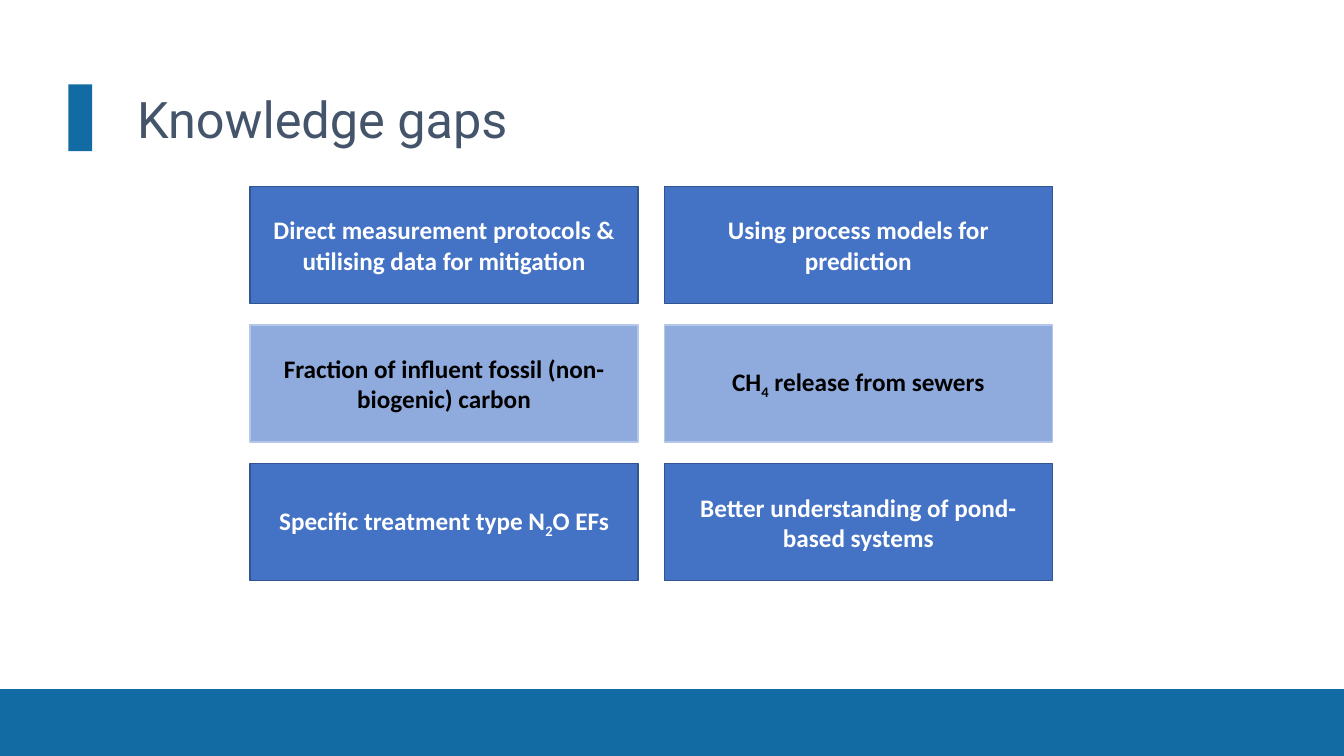
from pptx import Presentation
from pptx.dml.color import RGBColor
from pptx.enum.shapes import MSO_SHAPE
from pptx.enum.text import MSO_ANCHOR, MSO_AUTO_SIZE, PP_ALIGN
from pptx.util import Pt


def color(value):
    return RGBColor.from_string(value)


def add_block(left, top, width, height, fill, outline=None):
    block = slide.shapes.add_shape(
        MSO_SHAPE.RECTANGLE, Pt(left), Pt(top), Pt(width), Pt(height))
    block.shadow.inherit = False
    block.fill.solid()
    block.fill.fore_color.rgb = color(fill)
    if outline:
        block.line.color.rgb = color(outline)
        block.line.width = Pt(1)
    else:
        block.line.fill.background()
    return block


deck = Presentation()
deck.slide_width = Pt(960)
deck.slide_height = Pt(540)
slide = deck.slides.add_slide(deck.slide_layouts[5])

add_block(0, 492.2, 960, 47.8, "136BA3")
add_block(48.9, 60.2, 17, 47.8, "136BA3")

heading = slide.shapes.title
heading_place = {"left": 90.7, "top": 16.6, "width": 829.4, "height": 90}
for name, value in heading_place.items():
    setattr(heading, name, Pt(value))
heading_frame = heading.text_frame
heading_format = {
    "text": "Knowledge gaps", "word_wrap": True,
    "auto_size": MSO_AUTO_SIZE.NONE, "vertical_anchor": MSO_ANCHOR.BOTTOM,
    "margin_left": Pt(7.2), "margin_right": Pt(7.2),
    "margin_top": Pt(3.6), "margin_bottom": 0,
}
for name, value in heading_format.items():
    setattr(heading_frame, name, value)
heading_line = heading_frame.paragraphs[0]
heading_line.alignment = PP_ALIGN.LEFT
heading_line.line_spacing = 0.9
for name, value in {"name": "Roboto", "size": Pt(36), "bold": False}.items():
    setattr(heading_line.font, name, value)
heading_line.font.color.rgb = color("44546A")

gap_rows = [
    (["Direct measurement protocols & utilising data for mitigation"],
     ["Using process models for prediction"]),
    (["Fraction of influent fossil (non-biogenic) carbon"],
     ["CH", "4", " release from sewers"]),
    (["Specific treatment type N", "2", "O EFs"],
     ["Better understanding of pond-based systems"]),
]
row_colors = [("4472C4", "325491", "FFFFFF"), ("8FAADC", "B4C7E7", "000000")]
gap_font = {"name": "Calibri", "size": Pt(18), "bold": True}

for row, gaps in enumerate(gap_rows):
    fill, outline, ink = row_colors[row % 2]
    for column, pieces in enumerate(gaps):
        gap = add_block(178.6 + 295.9 * column, 133.2 + 99 * row,
                        277.2, 83.5, fill, outline)
        gap.text_frame.word_wrap = True
        gap.text_frame.vertical_anchor = MSO_ANCHOR.MIDDLE
        wording = gap.text_frame.paragraphs[0]
        wording.alignment = PP_ALIGN.CENTER
        for piece in pieces:
            run = wording.add_run()
            run.text = piece
            for name, value in gap_font.items():
                setattr(run.font, name, value)
            run.font.color.rgb = color(ink)
            if piece.isdigit():
                run._r.get_or_add_rPr().set("baseline", "-25000")

deck.save("out.pptx")
